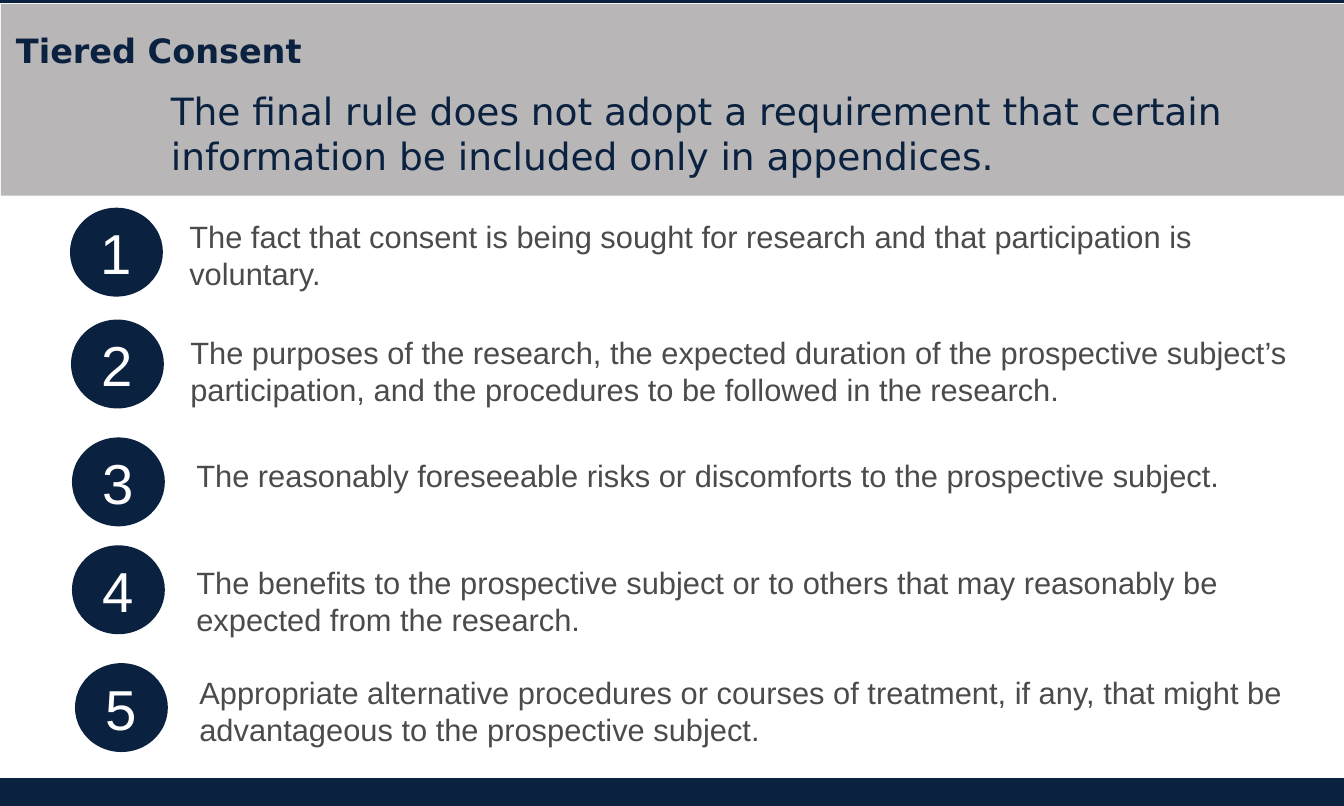
"""Build the Tiered Consent slide."""
from lxml import etree
from pptx import Presentation
from pptx.dml.color import RGBColor
from pptx.enum.shapes import MSO_SHAPE
from pptx.enum.text import MSO_ANCHOR, MSO_AUTO_SIZE, PP_ALIGN
from pptx.oxml.ns import qn
from pptx.util import Pt

PX = 914400 / 96.6
NAVY = RGBColor(0x0A, 0x22, 0x40)
GREY = RGBColor(0xB8, 0xB6, 0xB7)
INK = RGBColor(0x4C, 0x4A, 0x4B)
WHITE = RGBColor(0xFF, 0xFF, 0xFF)
RECT, OVAL = MSO_SHAPE.RECTANGLE, MSO_SHAPE.OVAL
TOP, MIDDLE = MSO_ANCHOR.TOP, MSO_ANCHOR.MIDDLE
LEFT, CENTER = PP_ALIGN.LEFT, PP_ALIGN.CENTER
FIXED = MSO_AUTO_SIZE.NONE
HEAD, BODY = "DejaVu Sans", "Arial"

RULE = ("The final rule does not adopt a requirement that certain "
        "information be included only in appendices.")
ITEMS = [
    (70, 208, 180, 213, [
        "The fact that consent is being sought for research and that "
        "participation is voluntary."]),
    (71, 320, 181, 329, [
        "The purposes of the research, the expected duration of the "
        "prospective subject’s participation, and the procedures to be "
        "followed in the research."]),
    (72, 438, 187, 453, [
        "The reasonably foreseeable risks or discomforts to the "
        "prospective subject."]),
    (72, 546, 187, 560, [
        "The benefits to the prospective subject or to others that may "
        "reasonably be expected from the research."]),
    (75, 664, 190, 670, [
        "Appropriate alternative procedures or courses of treatment, if "
        "any, that might be",
        "advantageous to the prospective subject."]),
]


def px(*vals):
    """Turn pixel lengths into EMU."""
    return [round(v * PX) for v in vals]


def write(par, text, font, size, color, bold=False, align=LEFT):
    """Add one formatted run to a paragraph."""
    par.alignment = align
    run = par.add_run()
    run.text = text
    run.font.name = font
    run.font.size = Pt(size)
    run.font.bold = bold
    run.font.color.rgb = color


def block(slide, kind, box, fill, edge=None):
    """Draw a flat shape, with a thick edge if a colour is given."""
    shape = slide.shapes.add_shape(kind, *px(*box))
    shape.shadow.inherit = False
    shape.fill.solid()
    shape.fill.fore_color.rgb = fill
    if edge is None:
        shape.line.fill.background()
    else:
        shape.line.color.rgb = edge
        shape.line.width = Pt(4.5)
    return shape


def header(slide, holder, box, text, size, bold=False):
    """Place a placeholder on the band and fill it with plain text."""
    slide.shapes._spTree.append(holder.element)
    holder.left, holder.top, holder.width, holder.height = px(*box)
    frame = holder.text_frame
    frame.word_wrap = True
    frame.auto_size = FIXED
    frame.vertical_anchor = TOP
    frame.margin_left = frame.margin_right = 0
    frame.margin_top = frame.margin_bottom = 0
    par = frame.paragraphs[0]
    props = par._p.get_or_add_pPr()
    props.set("marL", "0")
    props.set("indent", "0")
    etree.SubElement(props, qn("a:buNone"))
    par.space_before = Pt(0)
    write(par, text, HEAD, size, NAVY, bold)


def badge(slide, num, left, top):
    """Draw a numbered disc."""
    disc = block(slide, OVAL, (left, top, 93, 89), NAVY)
    frame = disc.text_frame
    frame.vertical_anchor = MIDDLE
    write(frame.paragraphs[0], str(num), BODY, 42, WHITE, align=CENTER)


def item(slide, left, top, lines):
    """Add the text beside a disc, one paragraph a line."""
    box = slide.shapes.add_textbox(*px(left, top, 1129, 85))
    frame = box.text_frame
    frame.word_wrap = True
    for i, line in enumerate(lines):
        par = frame.add_paragraph() if i else frame.paragraphs[0]
        write(par, line, BODY, 23, INK)


def main():
    """Build and save the slide."""
    deck = Presentation()
    deck.slide_width, deck.slide_height = px(1345, 807)
    slide = deck.slides.add_slide(deck.slide_layouts[1])
    title, rule = slide.placeholders
    block(slide, RECT, (-3, 0, 1352, 783), WHITE, NAVY)
    block(slide, RECT, (-3, 782, 1352, 30), NAVY, NAVY)
    block(slide, RECT, (1, 4, 1347, 192), GREY)
    header(slide, title, (16, 30, 1149, 41), "Tiered Consent", 25, True)
    header(slide, rule, (171, 88, 1149, 91), RULE, 28)
    for num, (x, y, left, top, lines) in enumerate(ITEMS, 1):
        badge(slide, num, x, y)
        item(slide, left, top, lines)
    deck.save("out.pptx")


if __name__ == "__main__":
    main()
